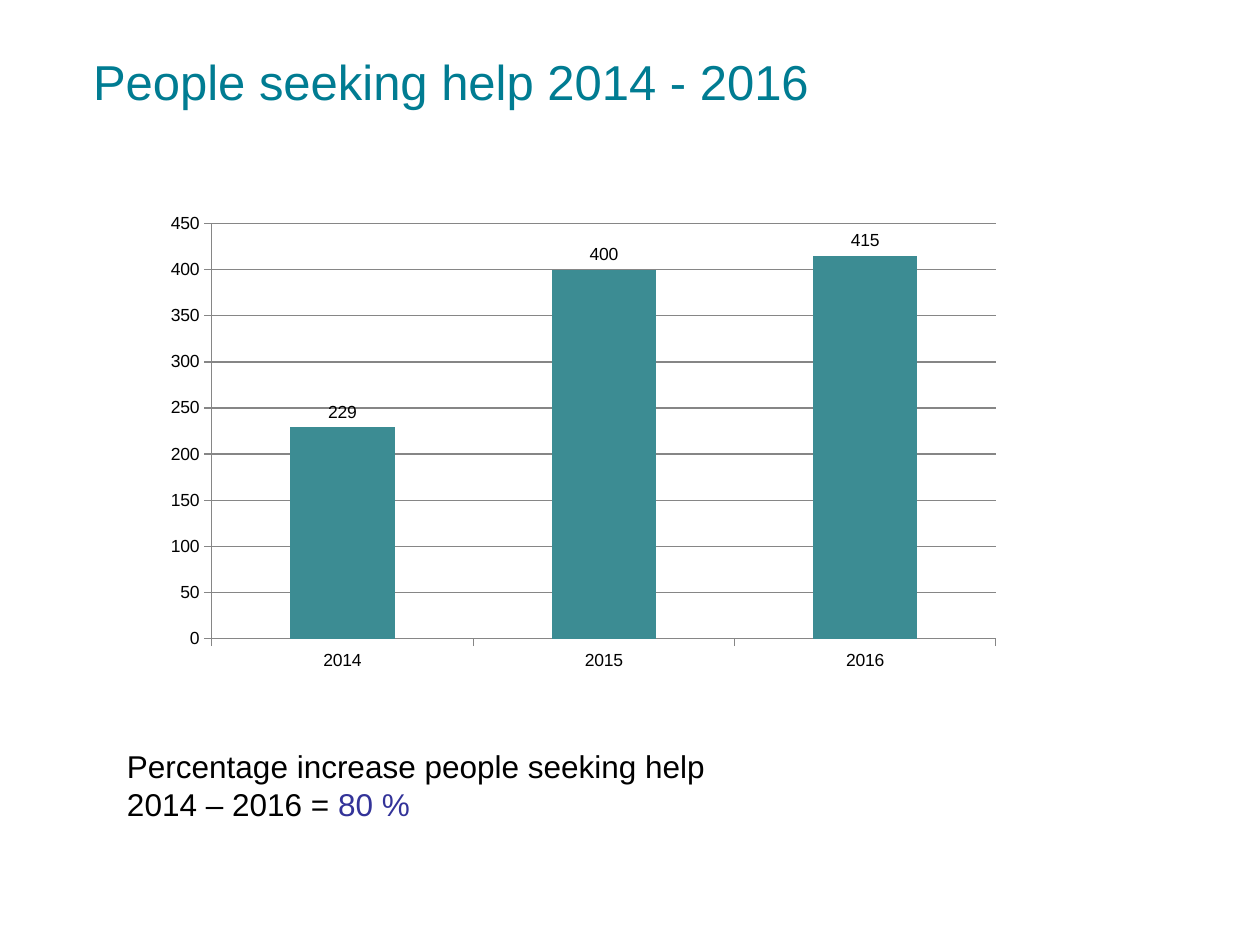
from pptx import Presentation
from pptx import util as u
from pptx.chart.data import CategoryChartData
from pptx.dml.color import RGBColor
from pptx.enum import chart as chart_enum, text

WIDTH, HEIGHT = u.Inches(10), u.Inches(7.5)
FONT = "Arial"
TEAL, BAR, BLUE, BLACK, GREY = "007C92", "3C8C93", "333399", "000000", "868686"


def color(hex_code):
    return RGBColor.from_string(hex_code)


def place(left, top, width, height):
    """Turn shares of the slide's size into lengths."""
    return (int(WIDTH * left), int(HEIGHT * top),
            int(WIDTH * width), int(HEIGHT * height))


def style_font(font, size, hex_code):
    font.name = FONT
    font.size = u.Pt(size)
    font.color.rgb = color(hex_code)


def add_text(slide, box, runs, size, anchor=text.MSO_ANCHOR.TOP):
    """Add one paragraph made of (words, colour) runs."""
    text_frame = slide.shapes.add_textbox(*place(*box)).text_frame
    text_frame.word_wrap = True
    text_frame.vertical_anchor = anchor
    paragraph = text_frame.paragraphs[0]
    for words, hex_code in runs:
        run = paragraph.add_run()
        run.text = words
        style_font(run.font, size, hex_code)


def style_line(line):
    line.color.rgb = color(GREY)
    line.width = u.Pt(0.75)


def add_column_chart(slide, box, categories, values):
    data = CategoryChartData()
    data.categories = categories
    data.add_series("Series 1", values)
    chart = slide.shapes.add_chart(
        chart_enum.XL_CHART_TYPE.COLUMN_CLUSTERED, *place(*box), data).chart
    chart.has_legend = False
    chart.has_title = False
    style_font(chart.font, 10, BLACK)

    # Axes and gridlines
    for axis in (chart.category_axis, chart.value_axis):
        axis.major_tick_mark = chart_enum.XL_TICK_MARK.OUTSIDE
        axis.minor_tick_mark = chart_enum.XL_TICK_MARK.NONE
        style_line(axis.format.line)
    value_axis = chart.value_axis
    value_axis.minimum_scale, value_axis.maximum_scale = 0, 450
    value_axis.major_unit = 50
    value_axis.has_major_gridlines = True
    style_line(value_axis.major_gridlines.format.line)

    # Columns and their labels
    plot = chart.plots[0]
    plot.gap_width = 150
    plot.vary_by_categories = False
    fill = plot.series[0].format.fill
    fill.solid()
    fill.fore_color.rgb = color(BAR)
    plot.has_data_labels = True
    labels = plot.data_labels
    labels.show_value = True
    labels.position = chart_enum.XL_LABEL_POSITION.OUTSIDE_END
    style_font(labels.font, 10, BLACK)


def main():
    presentation = Presentation()
    presentation.slide_width, presentation.slide_height = WIDTH, HEIGHT
    slide = presentation.slides.add_slide(presentation.slide_layouts[6])

    # Title
    add_text(slide, (0.064, 0.04, 0.9, 0.092),
             [("People seeking help 2014 - 2016", TEAL)], 28,
             text.MSO_ANCHOR.MIDDLE)

    # People per year
    add_column_chart(slide, (0.122, 0.216, 0.682, 0.504),
                     ["2014", "2015", "2016"], [229, 400, 415])

    # Conclusion
    add_text(slide, (0.091, 0.784, 0.48, 0.095),
             [("Percentage increase people seeking help 2014 – 2016 = ", BLACK),
              ("80 %", BLUE)], 18)

    presentation.save("out.pptx")


if __name__ == "__main__":
    main()
